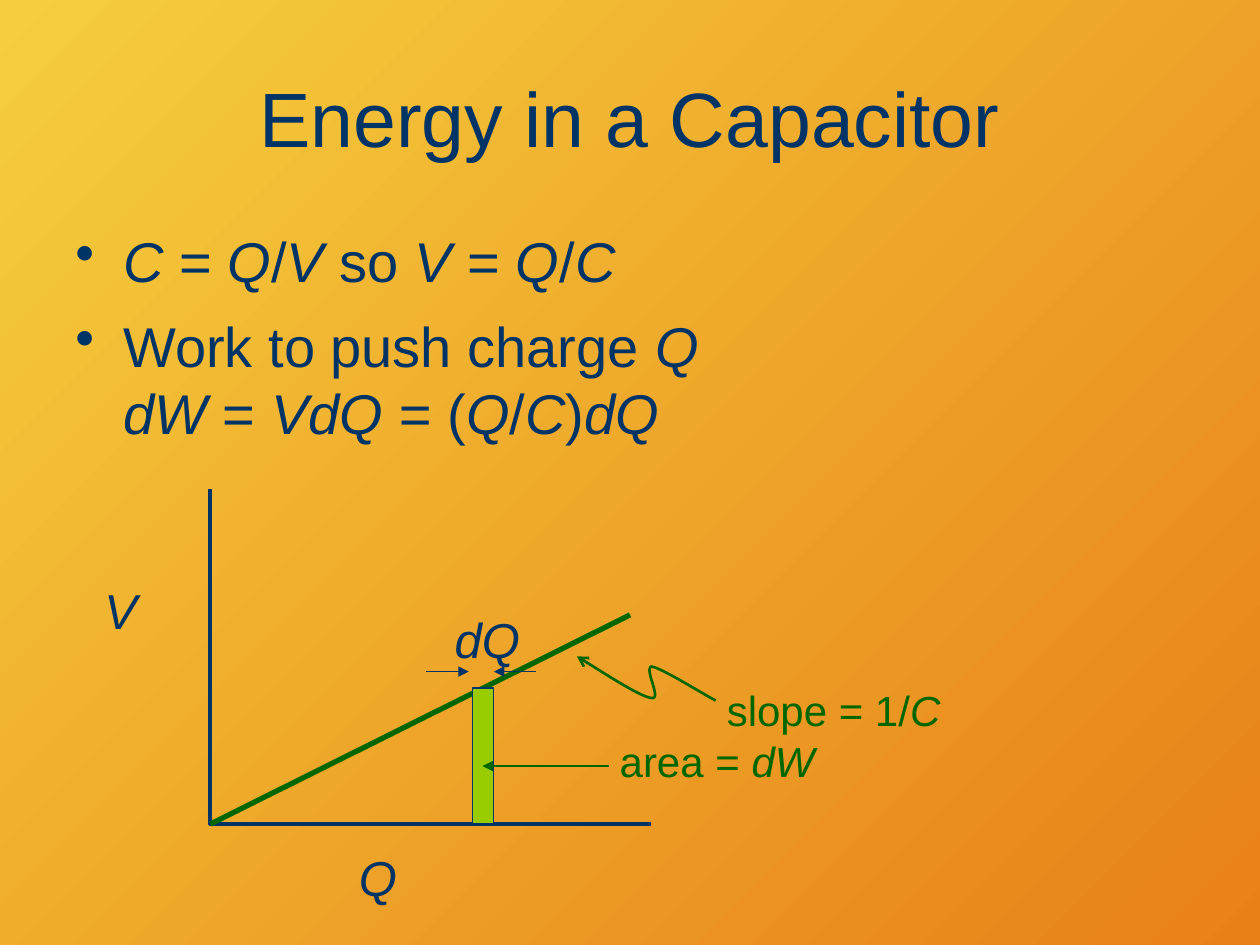
from dataclasses import dataclass

from lxml.etree import SubElement
from pptx import Presentation
from pptx.dml.color import RGBColor
from pptx.enum.shapes import MSO_CONNECTOR as Connector, MSO_SHAPE as Preset
from pptx.enum.text import MSO_ANCHOR as Anchor, MSO_AUTO_SIZE as AutoSize, PP_ALIGN as Align
from pptx.oxml.ns import qn
from pptx.util import Inches, Pt

Point = tuple[float, float]


@dataclass(frozen=True)
class Theme:
    font: str = "Arial"
    ink: str = "003366"
    green: str = "006600"
    strip: str = "99CC00"
    sky: tuple[str, str] = ("F5CE3D", "E88018")
    title: int = 44
    body: int = 32
    axis: int = 28
    note: int = 24


THEME = Theme()


@dataclass(frozen=True)
class Label:
    text: str
    left: float
    top: float
    width: float
    height: float
    size: int
    color: str = THEME.ink
    bullet: bool = False
    wrap: bool = False
    centered: bool = False


@dataclass(frozen=True)
class Stroke:
    start: Point
    end: Point
    color: str
    weight: float
    head: str = ""


ORIGIN = (1.67, 6.54)
STRIP_LEFT, STRIP_TOP, STRIP_WIDTH = 3.75, 5.46, 0.17
DQ_Y, AREA_Y = 5.33, 6.08

HEADINGS = [
    Label("Energy in a Capacitor", 0.5, 0.3, 9, 1.25, THEME.title, wrap=True, centered=True),
    Label("*C* = *Q*/*V* so *V* = *Q*/*C*", 0.5, 1.75, 9, 0.67, THEME.body, bullet=True, wrap=True),
    Label("Work to push charge *Q *\n*dW *= *VdQ = *(*Q*/*C*)*dQ*", 0.5, 2.42, 8.92, 1.33,
          THEME.body, bullet=True, wrap=True),
]
GRAPH_LABELS = [
    Label("*V*", 0.73, 4.56, 0.46, 0.57, THEME.axis),
    Label("*Q*", 2.75, 6.68, 0.5, 0.57, THEME.axis),
    Label("*dQ*", 3.51, 4.79, 0.73, 0.57, THEME.axis),
    Label("slope = 1/*C*", 5.67, 5.38, 1.9, 0.5, THEME.note, THEME.green),
    Label("area = *dW*", 4.82, 5.79, 1.76, 0.51, THEME.note, THEME.green),
]
SLOPE_LINE = Stroke(ORIGIN, (5, 4.88), THEME.green, 3)
POINTERS = [
    Stroke((3.38, DQ_Y), (3.72, DQ_Y), THEME.ink, 0.75, "triangle"),
    Stroke((4.25, DQ_Y), (3.92, DQ_Y), THEME.ink, 0.75, "triangle"),
    Stroke((4.83, AREA_Y), (3.83, AREA_Y), THEME.green, 1.5, "triangle"),
]
AXES = [(1.67, 3.88), ORIGIN, (5.17, 6.54)]
SQUIGGLE = [
    (5.68, 5.56), (5.6, 5.52), (5.25, 5.3), (5.17, 5.29), (5.11, 5.31),
    (5.26, 5.56), (5.17, 5.54), (5.07, 5.53), (4.7, 5.28), (4.58, 5.21),
]


def rgb(color: str) -> RGBColor:
    return RGBColor.from_string(color)


def paint_background(slide) -> None:
    fill = slide.background.fill
    fill.gradient()
    fill.gradient_angle = 315
    for stop, color, position in zip(fill.gradient_stops, THEME.sky, (0, 1)):
        stop.color.rgb = rgb(color)
        stop.position = position


def add_bullet(paragraph) -> None:
    paragraph.space_before = Pt(THEME.body * 0.2)
    props = paragraph._p.get_or_add_pPr()
    props.set("marL", str(Inches(0.38)))
    props.set("indent", str(Inches(-0.38)))
    bullet = props.makeelement(qn("a:buChar"), {"char": "•"})
    props.insert_element_before(bullet, "a:tabLst", "a:defRPr", "a:extLst")


def add_label(slide, label: Label) -> None:
    box = slide.shapes.add_textbox(
        Inches(label.left), Inches(label.top), Inches(label.width), Inches(label.height))
    frame = box.text_frame
    frame.word_wrap = label.wrap
    frame.auto_size = AutoSize.NONE if label.wrap else AutoSize.SHAPE_TO_FIT_TEXT
    paragraph = frame.paragraphs[0]
    if label.centered:
        frame.vertical_anchor = Anchor.MIDDLE
        paragraph.alignment = Align.CENTER
    font = paragraph.font
    font.name, font.size = THEME.font, Pt(label.size)
    font.color.rgb = rgb(label.color)
    if label.bullet:
        add_bullet(paragraph)
    for row, line in enumerate(label.text.split("\n")):
        if row:
            paragraph.add_line_break()
        for index, piece in enumerate(line.split("*")):
            if piece:
                run = paragraph.add_run()
                run.text = piece
                run.font.italic = index % 2 == 1


def style_line(shape, color: str, weight: float, head: str = "") -> None:
    shape.line.color.rgb = rgb(color)
    shape.line.width = Pt(weight)
    if head:
        SubElement(shape.line._get_or_add_ln(), qn("a:tailEnd"), type=head)


def add_stroke(slide, stroke: Stroke) -> None:
    ends = [Inches(value) for value in (*stroke.start, *stroke.end)]
    connector = slide.shapes.add_connector(Connector.STRAIGHT, *ends)
    style_line(connector, stroke.color, stroke.weight, stroke.head)
    SubElement(connector._element.spPr, qn("a:effectLst"))


def add_outline(slide, points: list[Point], color: str, weight: float, head: str = "") -> None:
    (left, top), *rest = [(Inches(x), Inches(y)) for x, y in points]
    builder = slide.shapes.build_freeform(left, top)
    builder.add_line_segments(rest, close=False)
    outline = builder.convert_to_shape()
    outline.fill.background()
    outline.shadow.inherit = False
    style_line(outline, color, weight, head)


def trace_curve(controls: list[Point], steps: int = 16) -> list[Point]:
    points = [controls[0]]
    for first in range(0, len(controls) - 1, 3):
        for step in range(1, steps + 1):
            t = step / steps
            weights = ((1 - t) ** 3, 3 * t * (1 - t) ** 2, 3 * t * t * (1 - t), t ** 3)
            segment = controls[first:first + 4]
            points.append(tuple(
                sum(w * c[axis] for w, c in zip(weights, segment)) for axis in (0, 1)))
    return points


def add_strip(slide) -> None:
    strip = slide.shapes.add_shape(
        Preset.RECTANGLE, Inches(STRIP_LEFT), Inches(STRIP_TOP),
        Inches(STRIP_WIDTH), Inches(ORIGIN[1] - STRIP_TOP))
    strip.fill.solid()
    strip.fill.fore_color.rgb = rgb(THEME.strip)
    strip.shadow.inherit = False
    style_line(strip, THEME.ink, 0.75)


def main() -> None:
    deck = Presentation()
    deck.slide_width, deck.slide_height = Inches(10), Inches(7.5)
    slide = deck.slides.add_slide(deck.slide_layouts[6])
    paint_background(slide)
    for heading in HEADINGS:
        add_label(slide, heading)
    add_outline(slide, AXES, THEME.ink, 2.25)
    add_stroke(slide, SLOPE_LINE)
    add_outline(slide, trace_curve(SQUIGGLE), THEME.green, 1.5, "arrow")
    add_strip(slide)
    for pointer in POINTERS:
        add_stroke(slide, pointer)
    for label in GRAPH_LABELS:
        add_label(slide, label)
    deck.save("out.pptx")


if __name__ == "__main__":
    main()
